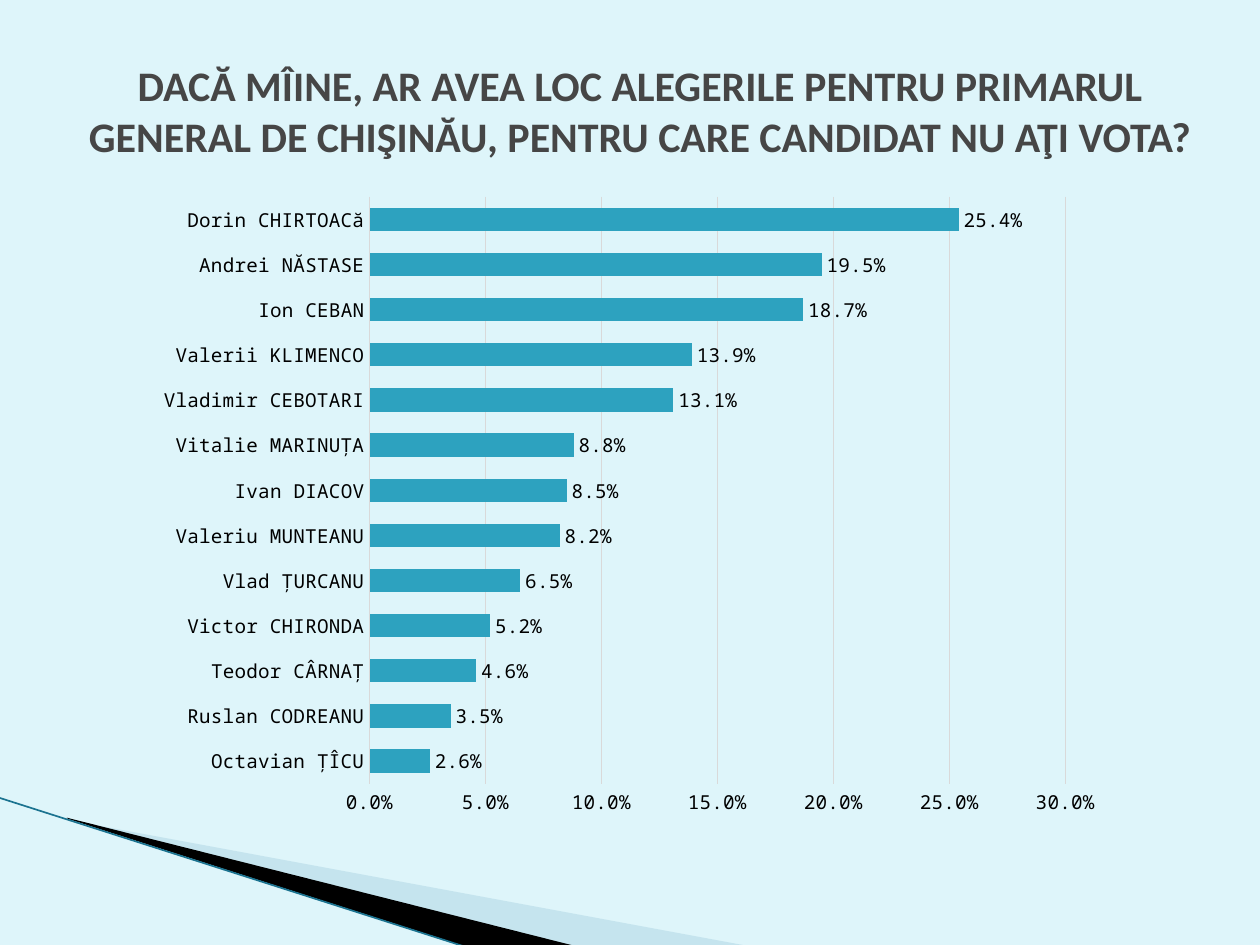
from typing import NamedTuple

from lxml.etree import SubElement
from pptx import Presentation
from pptx.chart.data import CategoryChartData
from pptx.dml.color import RGBColor
from pptx.enum.chart import XL_CHART_TYPE, XL_LABEL_POSITION, XL_TICK_MARK
from pptx.enum.shapes import MSO_CONNECTOR
from pptx.enum.text import MSO_ANCHOR, MSO_AUTO_SIZE, PP_ALIGN
from pptx.oxml import parse_xml
from pptx.oxml.ns import nsdecls, qn
from pptx.util import Pt

PALE_BLUE = RGBColor(0xDE, 0xF5, 0xFA)
WEDGE_BLUE = RGBColor(0xA0, 0xCB, 0xDC)
EDGE_BLUE = RGBColor(0x1B, 0x73, 0x90)
BAR_TEAL = RGBColor(0x2D, 0xA2, 0xBF)
GRID_GRAY = RGBColor(0xD9, 0xD9, 0xD9)
TITLE_GRAY = RGBColor(0x46, 0x46, 0x46)
BLACK = RGBColor(0, 0, 0)
TITLE_FONT = "Calibri"
CHART_FONT = "Noto Sans Mono"
PERCENT = "0.0%"
QUESTION = (
    "DACĂ MÎINE, AR AVEA LOC ALEGERILE PENTRU PRIMARUL GENERAL DE CHIŞINĂU, "
    "PENTRU CARE CANDIDAT NU AŢI VOTA?"
)


class Wedge(NamedTuple):
    corners: tuple
    color: RGBColor
    opacity: int


class Candidate(NamedTuple):
    name: str
    share: float


WEDGES = (
    Wedge(((39.6, 468.7), (428.4, 540.7), (328.3, 540.7), (39.6, 468)), WEDGE_BLUE, 40),
    Wedge(((38.2, 467.3), (329, 540.7), (267.8, 541.4), (38.9, 468)), BLACK, 100),
)

CANDIDATES = (
    Candidate("Octavian ȚÎCU", 0.026),
    Candidate("Ruslan CODREANU", 0.035),
    Candidate("Teodor CÂRNAȚ", 0.046),
    Candidate("Victor CHIRONDA", 0.052),
    Candidate("Vlad ȚURCANU", 0.065),
    Candidate("Valeriu MUNTEANU", 0.082),
    Candidate("Ivan DIACOV", 0.085),
    Candidate("Vitalie MARINUȚA", 0.088),
    Candidate("Vladimir CEBOTARI", 0.131),
    Candidate("Valerii KLIMENCO", 0.139),
    Candidate("Ion CEBAN", 0.187),
    Candidate("Andrei NĂSTASE", 0.195),
    Candidate("Dorin CHIRTOACă", 0.254),
)


def draw_wedge(slide, wedge: Wedge) -> None:
    start, *rest = [(Pt(x), Pt(y)) for x, y in wedge.corners]
    builder = slide.shapes.build_freeform(*start)
    builder.add_line_segments(rest, close=True)
    shape = builder.convert_to_shape()
    shape.shadow.inherit = False
    shape.line.fill.background()
    shape.fill.solid()
    shape.fill.fore_color.rgb = wedge.color
    if wedge.opacity < 100:
        color = shape.fill._xPr.find(qn("a:solidFill"))[0]
        SubElement(color, qn("a:alpha"), val=str(wedge.opacity * 1000))


def draw_edge(slide) -> None:
    edge = slide.shapes.add_connector(
        MSO_CONNECTOR.STRAIGHT, Pt(-0.7), Pt(455.8), Pt(267.1), Pt(541.4)
    )
    edge.line.color.rgb = EDGE_BLUE
    edge.line.width = Pt(0.95)
    SubElement(edge._element.spPr, qn("a:effectLst"))


def write_title(slide) -> None:
    title = slide.shapes.title
    title.left, title.top, title.width, title.height = Pt(41.8), Pt(18), Pt(648), Pt(90)
    frame = title.text_frame
    frame.text = QUESTION
    frame.word_wrap = True
    frame.auto_size = MSO_AUTO_SIZE.NONE
    frame.vertical_anchor = MSO_ANCHOR.MIDDLE
    paragraph = frame.paragraphs[0]
    paragraph.alignment = PP_ALIGN.CENTER
    font = paragraph.runs[0].font
    font.name, font.size, font.bold = TITLE_FONT, Pt(24), True
    font.color.rgb = TITLE_GRAY


def style_font(font) -> None:
    font.name, font.size = CHART_FONT, Pt(11)
    font.color.rgb = BLACK


def style_axis(axis) -> None:
    axis.major_tick_mark = XL_TICK_MARK.NONE
    axis.minor_tick_mark = XL_TICK_MARK.NONE
    style_font(axis.tick_labels.font)


def style_rule(line) -> None:
    line.color.rgb = GRID_GRAY
    line.width = Pt(0.75)


def place_plot(chart, x: float, y: float, width: float, height: float) -> None:
    plot_area = chart._chartSpace.chart.plotArea
    for old_layout in plot_area.findall(qn("c:layout")):
        plot_area.remove(old_layout)
    plot_area.insert(0, parse_xml(
        f'<c:layout {nsdecls("c")}><c:manualLayout>'
        '<c:layoutTarget val="inner"/><c:xMode val="edge"/><c:yMode val="edge"/>'
        f'<c:x val="{x}"/><c:y val="{y}"/><c:w val="{width}"/><c:h val="{height}"/>'
        '</c:manualLayout></c:layout>'
    ))


def draw_poll(slide) -> None:
    poll = CategoryChartData(number_format=PERCENT)
    poll.categories = [candidate.name for candidate in CANDIDATES]
    poll.add_series("Series 1", [candidate.share for candidate in CANDIDATES])
    chart = slide.shapes.add_chart(
        XL_CHART_TYPE.BAR_CLUSTERED, Pt(84.2), Pt(105.1), Pt(552.2), Pt(368.6), poll
    ).chart
    chart.has_title = False
    chart.has_legend = False
    style_font(chart.font)
    place_plot(chart, 0.23, 0.02, 0.72, 0.91)

    names, shares = chart.category_axis, chart.value_axis
    style_axis(names)
    style_rule(names.format.line)
    style_axis(shares)
    shares.format.line.fill.background()
    shares.has_major_gridlines = True
    style_rule(shares.major_gridlines.format.line)
    shares.minimum_scale, shares.maximum_scale, shares.major_unit = 0, 0.3, 0.05
    shares.tick_labels.number_format = PERCENT
    shares.tick_labels.number_format_is_linked = False

    plot = chart.plots[0]
    plot.gap_width = 94
    plot.vary_by_categories = False
    bars = plot.series[0]
    bars.invert_if_negative = False
    bars.format.fill.solid()
    bars.format.fill.fore_color.rgb = BAR_TEAL
    labels = bars.data_labels
    labels.show_value = True
    labels.position = XL_LABEL_POSITION.OUTSIDE_END
    labels.number_format = PERCENT
    labels.number_format_is_linked = False
    style_font(labels.font)


def main() -> None:
    presentation = Presentation()
    presentation.slide_width, presentation.slide_height = Pt(720), Pt(540)
    slide = presentation.slides.add_slide(presentation.slide_layouts[5])
    slide.background.fill.solid()
    slide.background.fill.fore_color.rgb = PALE_BLUE
    for wedge in WEDGES:
        draw_wedge(slide, wedge)
    draw_edge(slide)
    write_title(slide)
    draw_poll(slide)
    presentation.save("out.pptx")


if __name__ == "__main__":
    main()
